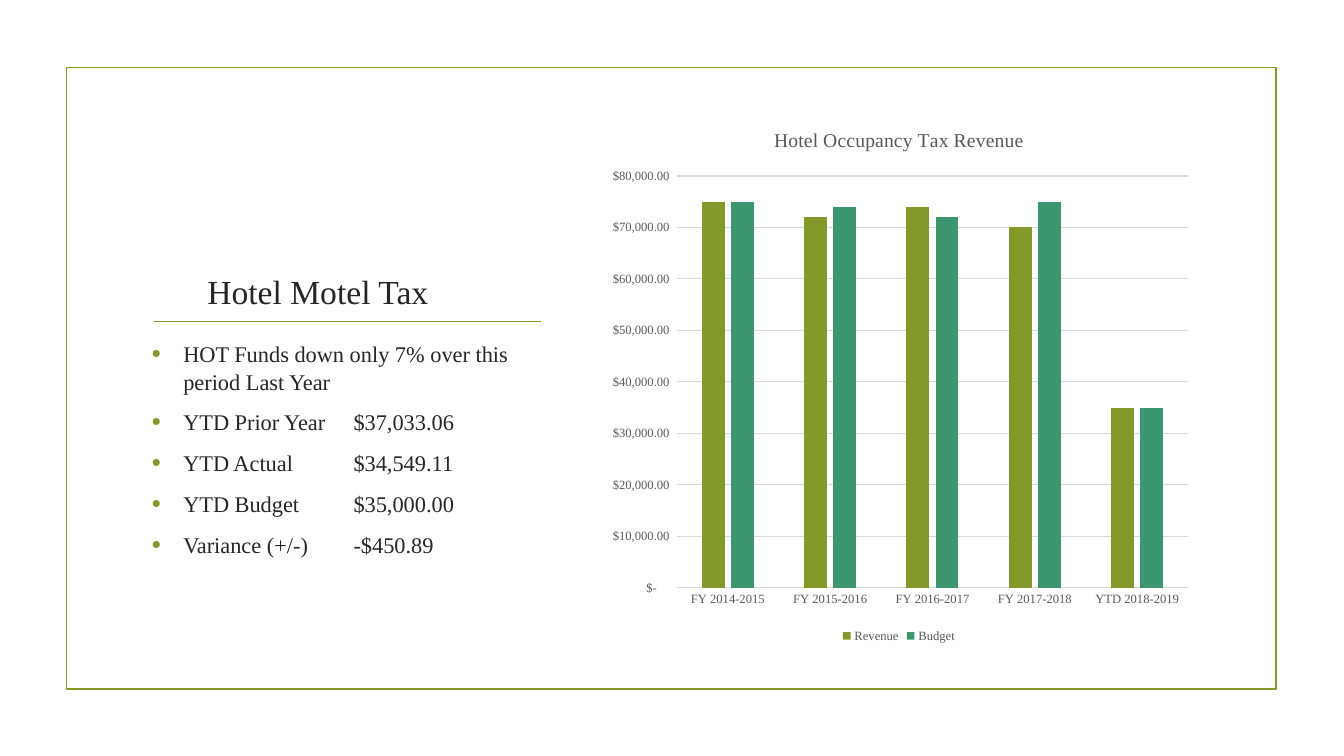
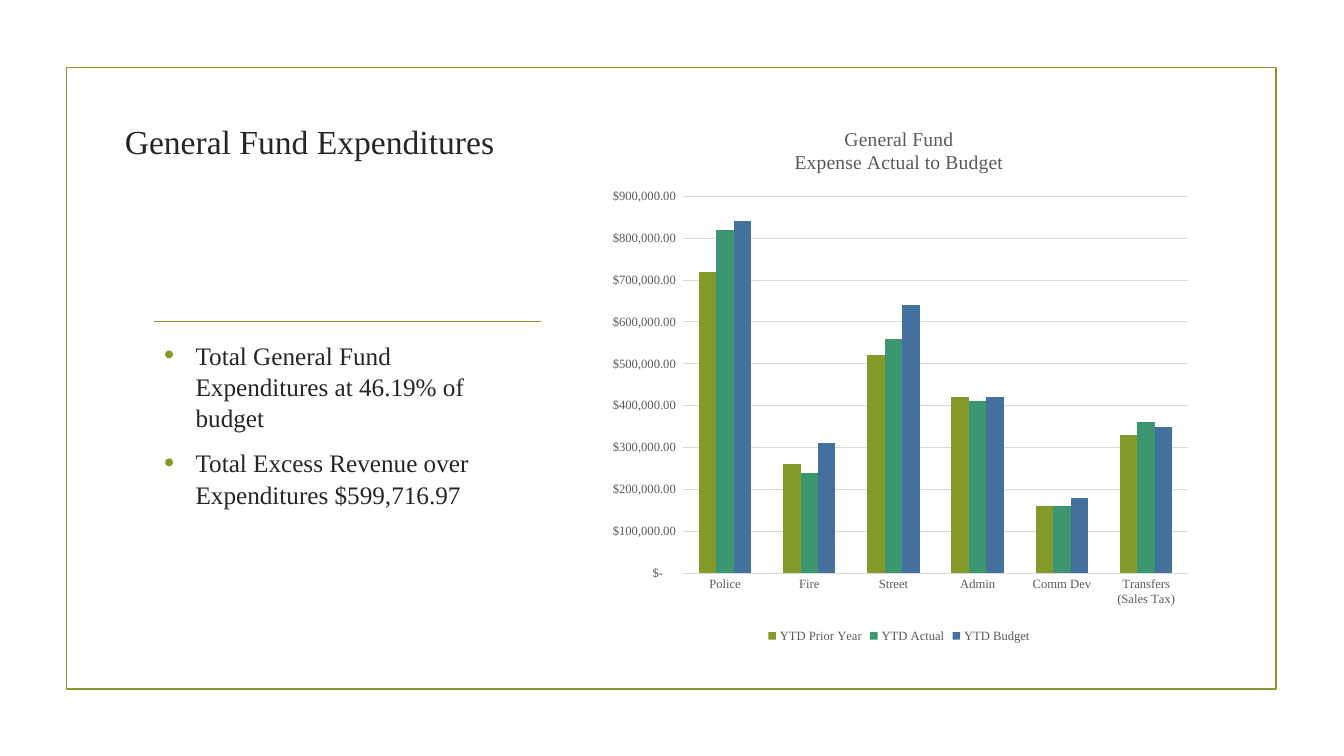
from dataclasses import dataclass
from lxml.etree import SubElement
from pptx import Presentation
from pptx.chart.data import CategoryChartData as Data
from pptx.dml.color import RGBColor as RGB
from pptx.enum.chart import (XL_CHART_TYPE as Kind, XL_LEGEND_POSITION as Spot,
                             XL_TICK_MARK as Tick)
from pptx.enum.shapes import MSO_CONNECTOR as Link, MSO_SHAPE as Form
from pptx.enum.text import MSO_ANCHOR as Anchor, PP_ALIGN as Align
from pptx.oxml.ns import qn
from pptx.util import Cm, Pt


@dataclass(frozen=True)
class Theme:
    face: str = "Times New Roman"
    ink: str = "262626"
    gray: str = "595959"
    grid: str = "D9D9D9"
    green: str = "83992A"
    white: str = "FFFFFF"
    bars: tuple = ("83992A", "3C9770", "44709D")
    head: int = 24
    title: int = 14
    label: int = 9
    edge: float = 1.25
    thin: float = 0.75
    money: str = ('_("$"* #,##0.00_);_("$"* \\(#,##0.00\\);'
                  '_("$"* "-"??_);_(@_)')


T = Theme()
FRAME = (1.68, 1.7, 30.48, 15.67)
RULE = (3.89, 8.1, 9.75)
CHART = (15.06, 2.72, 15.19, 13.59)


def cms(box):
    return [Cm(n) for n in box]


def style(font, size, color):
    font.name, font.size = T.face, Pt(size)
    font.color.rgb = RGB.from_string(color)


def stroke(line, color, width):
    line.color.rgb = RGB.from_string(color)
    line.width = Pt(width)


def frame(slide):
    """Green border and the rule under the title."""
    rect = slide.shapes.add_shape(Form.RECTANGLE, *cms(FRAME))
    rect.shadow.inherit = False
    rect.fill.background()
    stroke(rect.line, T.green, T.edge)
    x, y, w = RULE
    rule = slide.shapes.add_connector(Link.STRAIGHT, *cms((x, y, x + w, y)))
    stroke(rule.line, T.green, T.edge)
    SubElement(rule._element.spPr, qn("a:effectLst"))


def head(slide, box, text):
    """Centred title, sitting on the bottom of its box."""
    area = slide.shapes.add_textbox(*cms(box)).text_frame
    area.word_wrap = True
    area.vertical_anchor = Anchor.BOTTOM
    para = area.paragraphs[0]
    para.text, para.alignment = text, Align.CENTER
    style(para.font, T.head, T.ink)


def bullet(para):
    props = para._p.get_or_add_pPr()
    for key, val in (("marL", Cm(0.79)), ("indent", -Cm(0.79)),
                     ("defTabSz", Cm(1.27))):
        props.set(key, str(int(val)))
    color = SubElement(props, qn("a:buClr"))
    SubElement(color, qn("a:srgbClr"), val=T.green)
    SubElement(props, qn("a:buSzPct"), val="115000")
    SubElement(props, qn("a:buFont"), typeface="Arial")
    SubElement(props, qn("a:buChar"), char="•")


def points(slide, box, items, size, fill=None):
    """Bulleted list."""
    shape = slide.shapes.add_textbox(*cms(box))
    if fill:
        shape.fill.solid()
        shape.fill.fore_color.rgb = RGB.from_string(fill)
    area = shape.text_frame
    area.word_wrap = True
    for i, item in enumerate(items):
        para = area.add_paragraph() if i else area.paragraphs[0]
        para.text = item
        bullet(para)
        para.line_spacing = 1.04
        para.space_before = Pt(size * 0.2 if i else 0)
        para.space_after = Pt(6)
        style(para.font, size, T.ink)


def columns(slide, box, title, cats, series, gap, lap):
    """Clustered column chart in dollars."""
    data = Data(number_format=T.money)
    data.categories = cats
    for name, vals in series.items():
        data.add_series(name, vals)
    chart = slide.shapes.add_chart(
        Kind.COLUMN_CLUSTERED, *cms(box), data).chart
    style(chart.font, T.label, T.gray)

    # Title and legend
    chart.has_title = True
    area = chart.chart_title.text_frame
    area.text = title
    for para in area.paragraphs:
        style(para.font, T.title, T.gray)
        para.font.bold = False
    chart.chart_title.include_in_layout = False
    chart.has_legend = True
    chart.legend.position = Spot.BOTTOM
    chart.legend.include_in_layout = False
    style(chart.legend.font, T.label, T.gray)

    # Axes
    for axis in (chart.category_axis, chart.value_axis):
        axis.major_tick_mark = axis.minor_tick_mark = Tick.NONE
        style(axis.tick_labels.font, T.label, T.gray)
    stroke(chart.category_axis.format.line, T.grid, T.thin)
    axis = chart.value_axis
    axis.format.line.fill.background()
    stroke(axis.major_gridlines.format.line, T.grid, T.thin)
    axis.tick_labels.number_format = T.money
    axis.tick_labels.number_format_is_linked = False

    # Bars
    plot = chart.plots[0]
    plot.gap_width, plot.overlap, plot.vary_by_categories = gap, lap, False
    for bar, color in zip(plot.series, T.bars):
        bar.format.fill.solid()
        bar.format.fill.fore_color.rgb = RGB.from_string(color)


def hotel(slide):
    frame(slide)
    head(slide, (1.7, 2.72, 12.62, 5.26), "Hotel Motel Tax")
    points(slide, (3.58, 8.41, 10.34, 6.78), [
        "HOT Funds down only 7% over this period Last Year",
        "YTD Prior Year\t$37,033.06",
        "YTD Actual\t\t$34,549.11",
        "YTD Budget\t\t$35,000.00",
        "Variance (+/-)\t-$450.89",
    ], 16)
    columns(slide, CHART, "Hotel Occupancy Tax Revenue",
            ["FY 2014-2015", "FY 2015-2016", "FY 2016-2017",
             "FY 2017-2018", "YTD 2018-2019"],
            {"Revenue": (75000, 72000, 74000, 70000, 35000),
             "Budget": (75000, 74000, 72000, 75000, 35000)}, 219, -27)


def fund(slide):
    frame(slide)
    head(slide, (2.34, 1.27, 10.92, 2.92), "General Fund Expenditures")
    points(slide, (3.89, 8.41, 8.53, 5.03), [
        "Total General Fund Expenditures at 46.19% of budget",
        "Total Excess Revenue over Expenditures $599,716.97",
    ], 18, T.white)
    columns(slide, CHART, "General Fund\nExpense Actual to Budget",
            ["Police", "Fire", "Street", "Admin", "Comm Dev",
             "Transfers (Sales Tax)"],
            {"YTD Prior Year": (720000, 260000, 520000,
                                420000, 160000, 330000),
             "YTD Actual": (820000, 240000, 560000,
                            410000, 160000, 360000),
             "YTD Budget": (840000, 310000, 640000,
                            420000, 180000, 350000)}, 182, 0)


def main():
    deck = Presentation()
    deck.slide_width, deck.slide_height = Cm(33.87), Cm(19.05)
    for build in (hotel, fund):
        build(deck.slides.add_slide(deck.slide_layouts[6]))
    deck.save("out.pptx")


if __name__ == "__main__":
    main()
